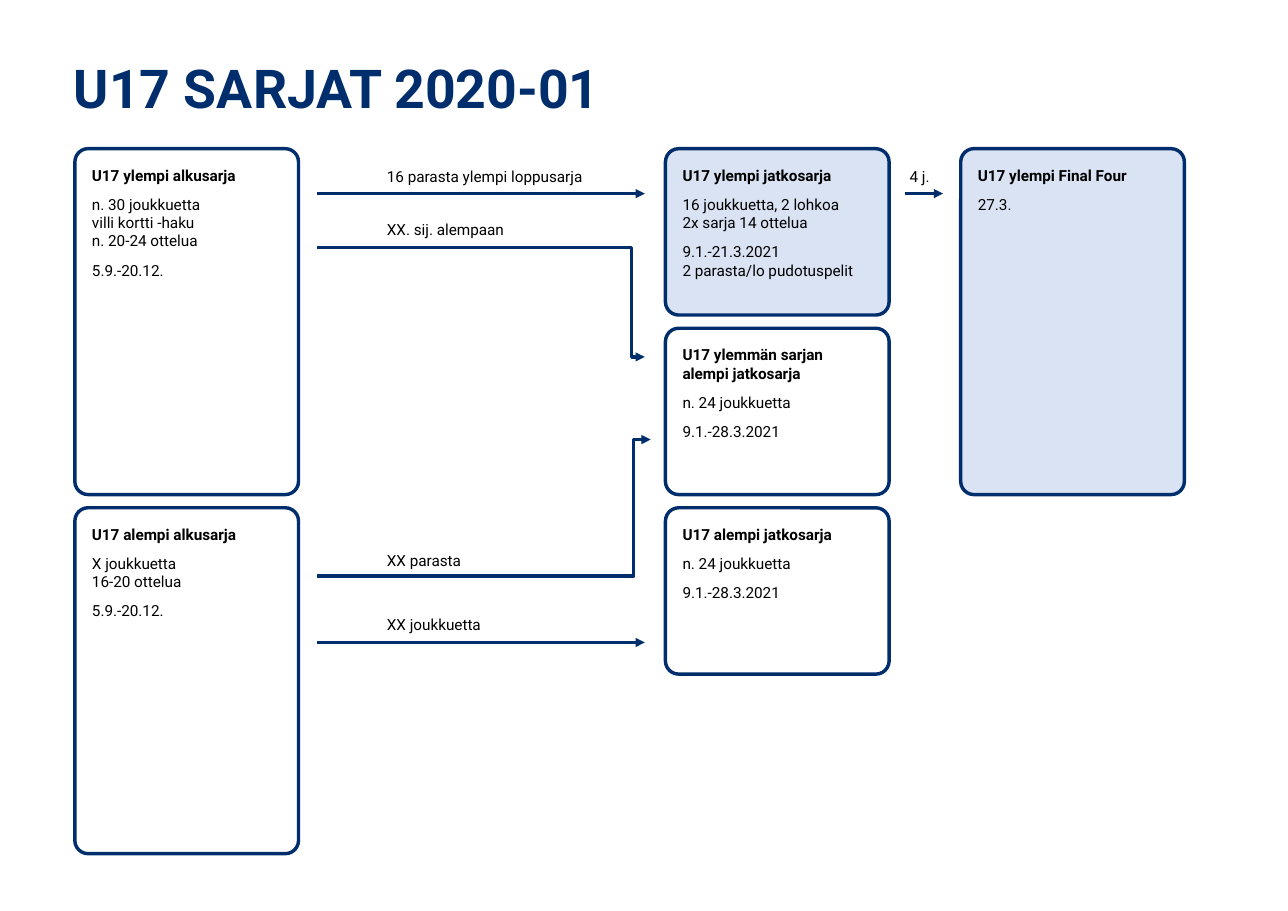
"""Build the U17 league season flow chart slide."""
from dataclasses import dataclass

from lxml import etree
from pptx import Presentation
from pptx.dml.color import RGBColor
from pptx.enum.shapes import MSO_CONNECTOR, MSO_SHAPE
from pptx.enum.text import MSO_ANCHOR, PP_ALIGN
from pptx.oxml.ns import qn
from pptx.util import Inches, Pt

STRAIGHT, ELBOW = MSO_CONNECTOR.STRAIGHT, MSO_CONNECTOR.ELBOW
ROUNDED = MSO_SHAPE.ROUNDED_RECTANGLE
TOP, LEFT = MSO_ANCHOR.TOP, PP_ALIGN.LEFT


@dataclass(frozen=True)
class Theme:
    """Colours, type sizes and grid measures."""
    font: str = "Roboto"
    navy: RGBColor = RGBColor.from_string("002E6D")
    pale: RGBColor = RGBColor.from_string("DAE3F3")
    black: RGBColor = RGBColor.from_string("000000")
    title_size: float = 35
    text_size: float = 10
    block_gap: float = 7
    border: float = 2.25
    arrow: float = 2
    radius: float = 0.12
    left: float = 0.68
    top: float = 1.35
    column: float = 2.68
    row: float = 1.63
    card_width: float = 2.03
    card_height: float = 1.51


class FlowPage:
    """Draws the flow chart's elements on one slide by grid position."""

    def __init__(self, page, theme):
        """Keep the slide and its theme."""
        self.page, self.theme = page, theme

    def place(self, column, row):
        """Turn a grid position into slide lengths."""
        theme = self.theme
        return (Inches(theme.left + column * theme.column),
                Inches(theme.top + row * theme.row))

    def add_span(self, para, text, **changes):
        """Add one styled span to a paragraph."""
        para.alignment = LEFT
        span = para.add_run()
        span.text = text
        colour = changes.pop("colour", self.theme.black)
        formats = {"name": self.theme.font, "size": Pt(self.theme.text_size),
                   "bold": False, **changes}
        for name, value in formats.items():
            setattr(span.font, name, value)
        span.font.color.rgb = colour

    def label(self, column, row, text, columns=0.84, rows=0.35, **changes):
        """Add a line of free text."""
        box = self.page.shapes.add_textbox(
            *self.place(column, row), Inches(columns * self.theme.column),
            Inches(rows * self.theme.row))
        box.text_frame.word_wrap = True
        self.add_span(box.text_frame.paragraphs[0], text, **changes)

    def card(self, column, row, rows, filled, blocks):
        """Add a rounded card with a bold heading block and body blocks."""
        theme = self.theme
        height = theme.card_height + (rows - 1) * theme.row
        box = self.page.shapes.add_shape(
            ROUNDED, *self.place(column, row), Inches(theme.card_width), Inches(height))
        box.adjustments[0] = theme.radius / min(theme.card_width, height)
        box.shadow.inherit = False
        box.line.color.rgb, box.line.width = theme.navy, Pt(theme.border)
        if filled:
            box.fill.solid()
            box.fill.fore_color.rgb = theme.pale
        else:
            box.fill.background()
        frame = box.text_frame
        formats = {"word_wrap": True, "vertical_anchor": TOP,
                   "margin_left": Inches(0.12), "margin_top": Inches(0.12)}
        for name, value in formats.items():
            setattr(frame, name, value)
        para = frame.paragraphs[0]
        for block_index, block in enumerate(blocks):
            for line_index, text in enumerate(block):
                if block_index or line_index:
                    para = frame.add_paragraph()
                if block_index and not line_index:
                    para.space_before = Pt(theme.block_gap)
                self.add_span(para, text, bold=block_index == 0)

    def arrow(self, start, end, bend=None):
        """Add an arrow, bent at a share of its width when given."""
        kind = ELBOW if bend else STRAIGHT
        line = self.page.shapes.add_connector(kind, *self.place(*start), *self.place(*end))
        line.line.color.rgb, line.line.width = self.theme.navy, Pt(self.theme.arrow)
        properties = line.element.spPr
        etree.SubElement(properties.find(qn("a:ln")), qn("a:tailEnd"), type="triangle")
        etree.SubElement(properties, qn("a:effectLst"))
        if bend:
            guides = properties.find(qn("a:prstGeom")).find(qn("a:avLst"))
            etree.SubElement(guides, qn("a:gd"), name="adj1",
                             fmla=f"val {round(bend * 100000)}")


CARDS = [
    (0, 0, 2, False, [["U17 ylempi alkusarja"],
                      ["n. 30 joukkuetta", "villi kortti -haku", "n. 20-24 ottelua"],
                      ["5.9.-20.12."]]),
    (0, 2, 2, False, [["U17 alempi alkusarja"], ["X joukkuetta", "16-20 ottelua"],
                      ["5.9.-20.12."]]),
    (2, 0, 1, True, [["U17 ylempi jatkosarja"],
                     ["16 joukkuetta, 2 lohkoa", "2x sarja 14 ottelua"],
                     ["9.1.-21.3.2021", "2 parasta/lo pudotuspelit"]]),
    (2, 1, 1, False, [["U17 ylemmän sarjan", "alempi jatkosarja"],
                      ["n. 24 joukkuetta"], ["9.1.-28.3.2021"]]),
    (2, 2, 1, False, [["U17 alempi jatkosarja"], ["n. 24 joukkuetta"],
                      ["9.1.-28.3.2021"]]),
    (3, 0, 2, True, [["U17 ylempi Final Four"], ["27.3."]]),
]
ARROWS = [
    ((0.82, 0.25), (1.93, 0.25)),
    ((0.82, 0.55), (1.93, 1.16), 0.96),
    ((0.82, 2.38), (1.95, 1.62), 0.95),
    ((0.82, 2.75), (1.93, 2.75)),
    ((2.81, 0.25), (2.94, 0.25)),
]
LABELS = [
    (1.02, 0.07, "16 parasta ylempi loppusarja"),
    (1.02, 0.37, "XX. sij. alempaan"),
    (1.02, 2.21, "XX parasta"),
    (1.02, 2.57, "XX joukkuetta"),
    (2.79, 0.07, "4 j.", 0.18),
]


def main():
    """Build and save the deck."""
    deck = Presentation()
    deck.slide_width, deck.slide_height = Inches(11.69), Inches(8.27)
    theme = Theme()
    flow = FlowPage(deck.slides.add_slide(deck.slide_layouts[6]), theme)
    flow.label(-0.04, -0.55, "U17 SARJAT 2020-01", 3.6, 0.42,
               size=Pt(theme.title_size), bold=True, colour=theme.navy)
    for card in CARDS:
        flow.card(*card)
    for arrow in ARROWS:
        flow.arrow(*arrow)
    for label in LABELS:
        flow.label(*label)
    deck.save("out.pptx")


if __name__ == "__main__":
    main()
